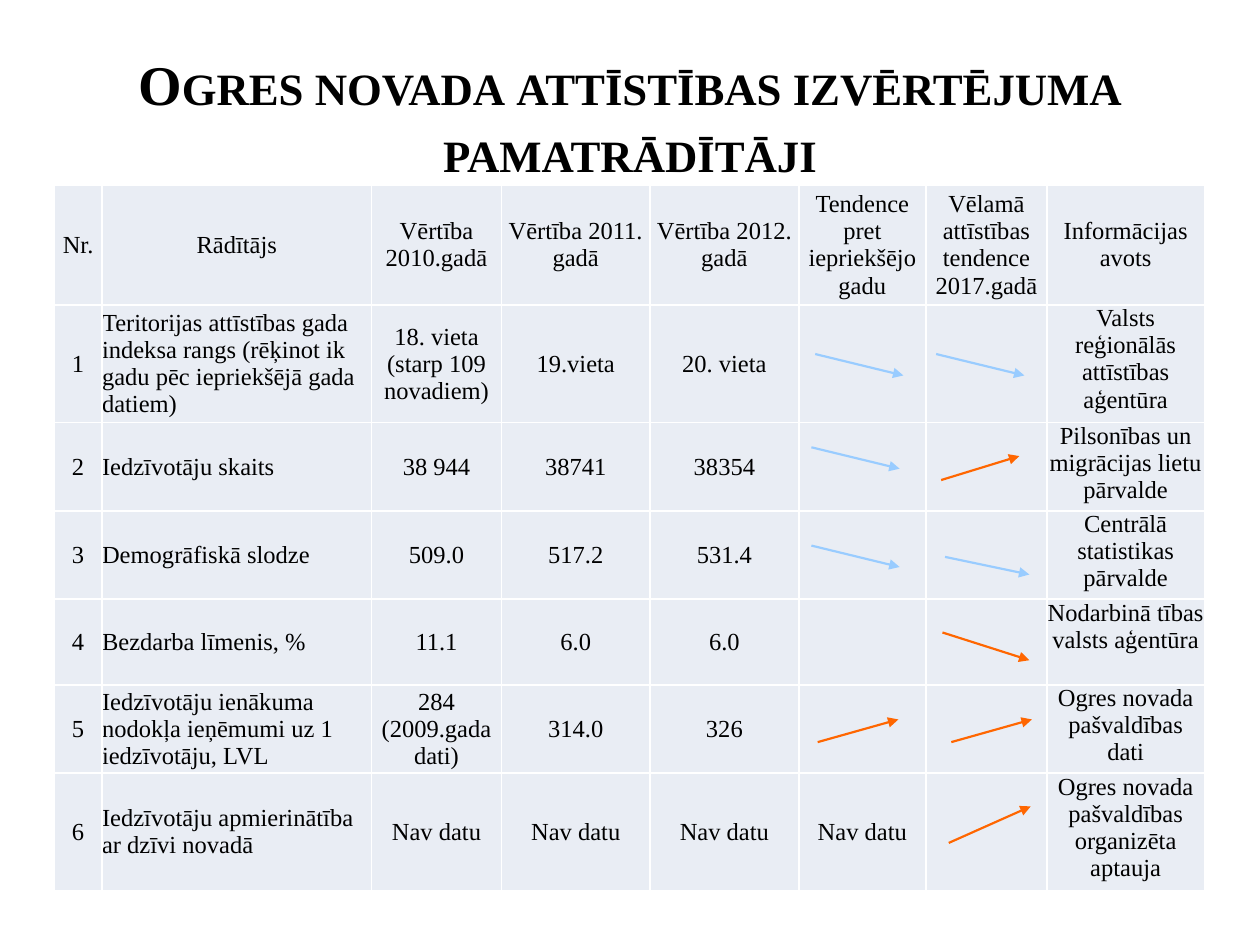
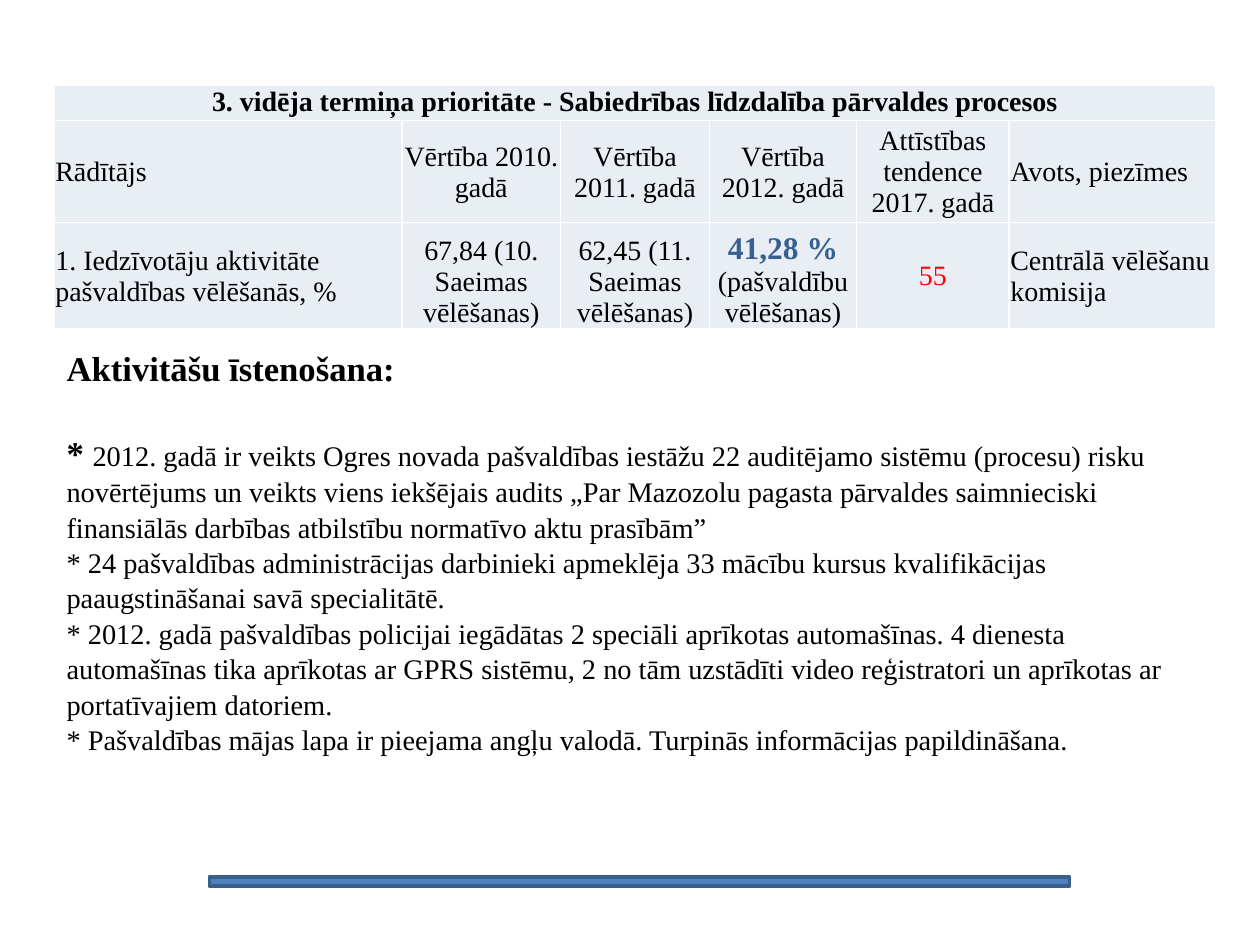
"""Two slides on the development indicators of Ogre municipality."""
from lxml.etree import SubElement
from pptx import Presentation
from pptx.dml.color import RGBColor
from pptx.enum.shapes import MSO_CONNECTOR, MSO_SHAPE
from pptx.enum.text import MSO_ANCHOR, PP_ALIGN
from pptx.oxml.ns import qn
from pptx.util import Inches, Pt

FONT = "Times New Roman"
BLACK = RGBColor(0x00, 0x00, 0x00)
WHITE = RGBColor(0xFF, 0xFF, 0xFF)
CELL = RGBColor(0xE9, 0xED, 0xF4)
SKY = RGBColor(0x99, 0xCC, 0xFF)
ORANGE = RGBColor(0xFF, 0x66, 0x00)
RED = RGBColor(0xFF, 0x00, 0x00)
NAVY = RGBColor(0x37, 0x60, 0x92)
BAR = RGBColor(0x4F, 0x81, 0xBD)
BAR_EDGE = RGBColor(0x3A, 0x5F, 0x8C)
LEFT, CENTER = PP_ALIGN.LEFT, PP_ALIGN.CENTER
TOP, MIDDLE, BOTTOM = MSO_ANCHOR.TOP, MSO_ANCHOR.MIDDLE, MSO_ANCHOR.BOTTOM


def write(p, text, size=14, color=BLACK, bold=False, align=LEFT, small_caps=False):
    p.alignment = align
    r = p.add_run()
    r.text = text
    r.font.name = FONT
    r.font.size = Pt(size)
    r.font.bold = bold
    r.font.color.rgb = color
    if small_caps:
        r._r.get_or_add_rPr().set("cap", "small")


def add_grid(slide, top, widths, heights, inset):
    table = slide.shapes.add_table(
        len(heights), len(widths), Inches(0.43), Inches(top),
        Inches(sum(widths)), Inches(sum(heights))).table
    table.first_row = table.horz_banding = False
    for column, width in zip(table.columns, widths):
        column.width = Inches(width)
    for row, height in zip(table.rows, heights):
        row.height = Inches(height)
    for cell in table.iter_cells():
        cell.margin_left = cell.margin_right = cell.margin_top = Inches(inset)
        cell.margin_bottom = 0
        cell.vertical_anchor = MIDDLE
        tcPr = cell._tc.get_or_add_tcPr()
        for side in ("a:lnL", "a:lnR", "a:lnT", "a:lnB"):
            ln = SubElement(tcPr, qn(side), w=str(Pt(1)))
            SubElement(SubElement(ln, qn("a:solidFill")), qn("a:srgbClr"), val=str(WHITE))
        cell.fill.solid()
        cell.fill.fore_color.rgb = CELL
    return table


prs = Presentation()
prs.slide_width, prs.slide_height = Inches(10), Inches(7.5)
blank = prs.slide_layouts[6]

s = prs.slides.add_slide(blank)
tf = s.shapes.add_textbox(Inches(0.5), Inches(0.3), Inches(9), Inches(1.25)).text_frame
tf.word_wrap = True
tf.vertical_anchor = MIDDLE
write(tf.paragraphs[0], "Ogres novada attīstības izvērtējuma pamatrādītāji",
      size=32, bold=True, align=CENTER, small_caps=True)

indicators = [
    ("Nr.", "Rādītājs", "Vērtība 2010.gadā", "Vērtība 2011. gadā", "Vērtība 2012. gadā",
     "Tendence pret iepriekšējo gadu", "Vēlamā attīstības tendence 2017.gadā",
     "Informācijas avots"),
    ("1", "Teritorijas attīstības gada indeksa rangs (rēķinot ik gadu pēc iepriekšējā gada datiem)",
     "18. vieta (starp 109 novadiem)", "19.vieta", "20. vieta", "", "",
     "Valsts reģionālās attīstības aģentūra"),
    ("2", "Iedzīvotāju skaits", "38 944", "38741", "38354", "", "",
     "Pilsonības un migrācijas lietu pārvalde"),
    ("3", "Demogrāfiskā slodze", "509.0", "517.2", "531.4", "", "",
     "Centrālā statistikas pārvalde"),
    ("4", "Bezdarba līmenis, %", "11.1", "6.0", "6.0", "", "",
     "Nodarbinā tības valsts aģentūra"),
    ("5", "Iedzīvotāju ienākuma nodokļa ieņēmumi uz 1 iedzīvotāju, LVL",
     "284 (2009.gada dati)", "314.0", "326", "", "", "Ogres novada pašvaldības dati"),
    ("6", "Iedzīvotāju apmierinātība ar dzīvi novadā", "Nav datu", "Nav datu", "Nav datu",
     "Nav datu", "", "Ogres novada pašvaldības organizēta aptauja"),
]
table = add_grid(s, 1.47, [0.38, 2.14, 1.03, 1.18, 1.18, 1.01, 0.96, 1.25],
                 [0.95, 0.91, 0.68, 0.68, 0.68, 0.68, 0.91], 0)
for i, row in enumerate(indicators):
    for j, text in enumerate(row):
        cell = table.cell(i, j)
        if text:
            write(cell.text_frame.paragraphs[0], text,
                  align=LEFT if i and j == 1 else CENTER)
        if i and j == 7:
            cell.vertical_anchor = TOP

trends = [
    (7.43, 2.81, 8.13, 2.98, SKY),
    (7.47, 3.81, 8.09, 3.62, ORANGE),
    (7.5, 4.42, 8.17, 4.56, SKY),
    (7.55, 5.89, 8.19, 5.71, ORANGE),
    (7.53, 6.69, 8.18, 6.4, ORANGE),
    (7.48, 5.02, 8.17, 5.24, ORANGE),
    (6.44, 3.55, 7.14, 3.72, SKY),
    (6.47, 2.81, 7.17, 2.98, SKY),
    (6.44, 4.33, 7.14, 4.5, SKY),
    (6.49, 5.89, 7.13, 5.71, ORANGE),
]
for *ends, color in trends:
    arrow = s.shapes.add_connector(MSO_CONNECTOR.STRAIGHT, *map(Inches, ends))
    arrow.line.color.rgb = color
    arrow.line.width = Pt(1.25)
    SubElement(arrow.line._get_or_add_ln(), qn("a:tailEnd"), type="triangle")
    SubElement(arrow._element.spPr, qn("a:effectLst"))

s = prs.slides.add_slide(blank)
tf = s.shapes.add_textbox(Inches(0.43), Inches(2.69), Inches(9.21), Inches(3.7)).text_frame
tf.word_wrap = True
activities = [
    "2012. gadā ir veikts Ogres novada pašvaldības iestāžu 22 auditējamo sistēmu (procesu) risku "
    "novērtējums un veikts viens iekšējais audits „Par Mazozolu pagasta pārvaldes saimnieciski "
    "finansiālās darbības atbilstību normatīvo aktu prasībām”",
    "* 24 pašvaldības administrācijas darbinieki apmeklēja 33 mācību kursus kvalifikācijas "
    "paaugstināšanai savā specialitātē.",
    "* 2012. gadā pašvaldības policijai iegādātas 2 speciāli aprīkotas automašīnas. 4 dienesta "
    "automašīnas tika aprīkotas ar GPRS sistēmu, 2 no tām uzstādīti video reģistratori un "
    "aprīkotas ar portatīvajiem datoriem.",
    "* Pašvaldības mājas lapa ir pieejama angļu valodā. Turpinās informācijas papildināšana.",
]
p = tf.paragraphs[0]
write(p, "Aktivitāšu īstenošana:", size=19.8, bold=True)
p.line_spacing = 1.04
p.space_after = Pt(23.7)
for i, activity in enumerate(activities):
    p = tf.add_paragraph()
    p.line_spacing = 1.04
    if i == 0:
        write(p, "* ", size=19.8, bold=True)
    write(p, activity, size=16.2)

table = add_grid(s, 0.68, [2.76, 1.26, 1.18, 1.17, 1.21, 1.64], [0.25, 0.75, 0.78], 0.01)
table.cell(0, 0).merge(table.cell(0, 5))
write(table.cell(0, 0).text_frame.paragraphs[0],
      "3. vidēja termiņa prioritāte - Sabiedrības līdzdalība pārvaldes procesos",
      size=16, bold=True, align=CENTER)
table.cell(0, 0).vertical_anchor = TOP
turnout = [
    ("Rādītājs", "Vērtība 2010. gadā", "Vērtība 2011. gadā", "Vērtība 2012. gadā",
     "Attīstības tendence 2017. gadā", "Avots, piezīmes"),
    ("1. Iedzīvotāju aktivitāte pašvaldības vēlēšanās, %", "67,84 (10. Saeimas vēlēšanas)",
     "62,45 (11. Saeimas vēlēšanas)", "(pašvaldību vēlēšanas)", "55",
     "Centrālā vēlēšanu komisija"),
]
for i, row in enumerate(turnout, 1):
    for j, text in enumerate(row):
        cell = table.cell(i, j)
        p = cell.text_frame.paragraphs[0]
        if (i, j) == (2, 3):
            write(p, "41,28 % ", size=18, color=NAVY, bold=True)
        write(p, text, size=16, color=RED if text == "55" else BLACK,
              align=LEFT if j in (0, 5) else CENTER)
        if i == 2 and j in (1, 2, 3):
            cell.vertical_anchor = BOTTOM

sp = s.shapes.add_shape(MSO_SHAPE.MATH_MINUS, Inches(0.43), Inches(6.84),
                        Inches(9.29), Inches(0.31))
sp.shadow.inherit = False
sp.fill.solid()
sp.fill.fore_color.rgb = BAR
sp.line.color.rgb = BAR_EDGE
sp.line.width = Pt(2)

prs.save("out.pptx")
